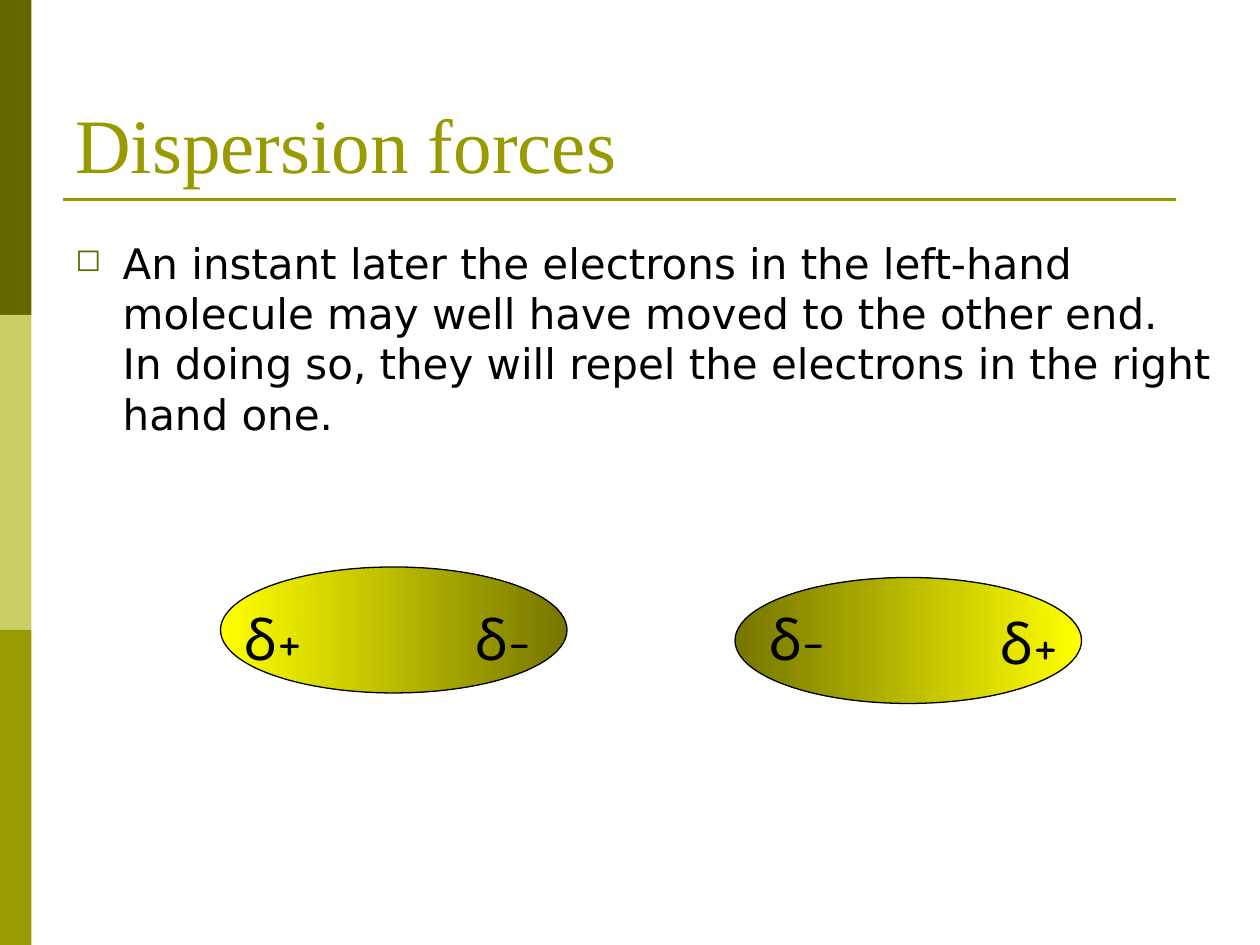
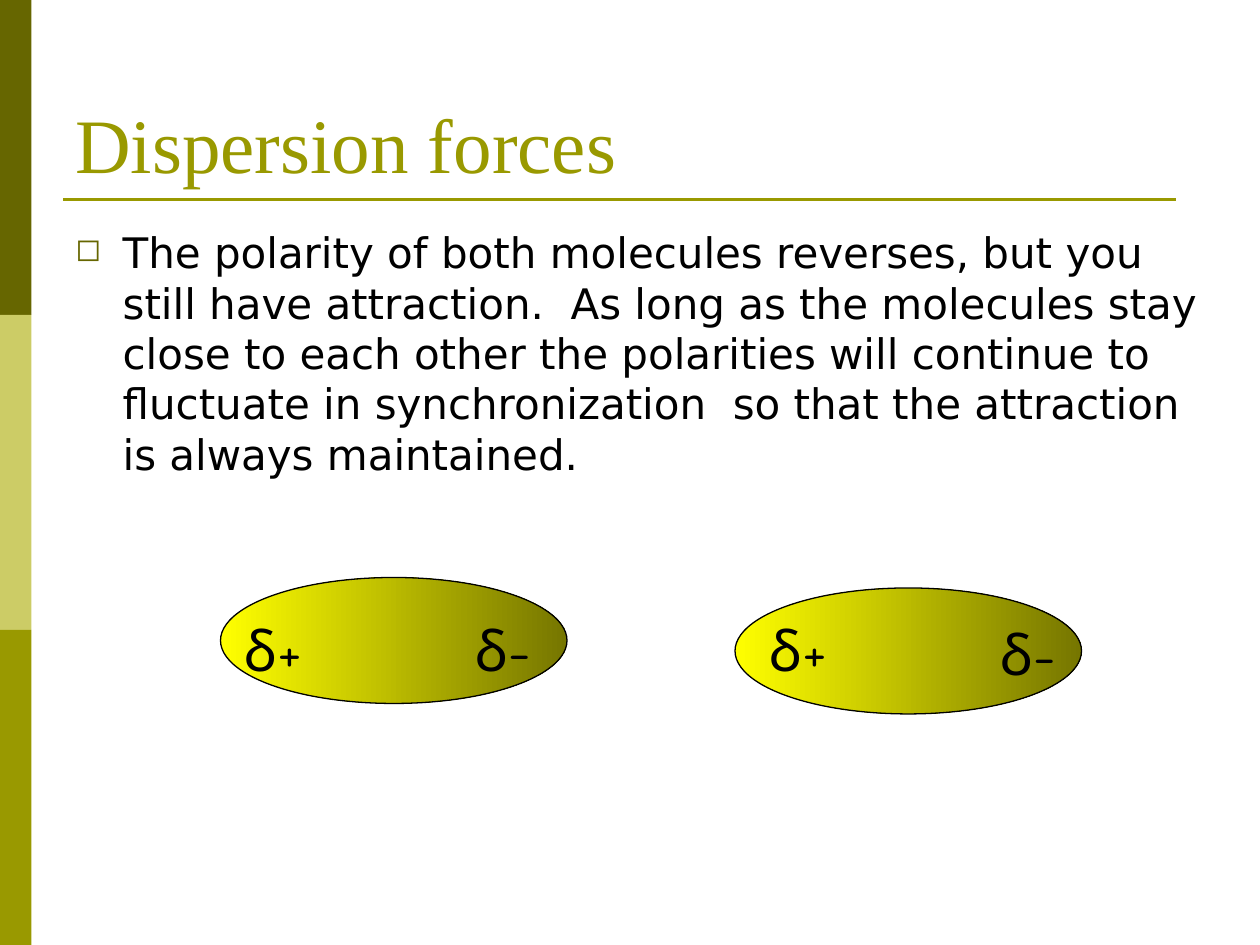
from lxml import etree
from pptx import Presentation
from pptx.dml.color import RGBColor
from pptx.enum import shapes, text
from pptx.oxml import ns
from pptx.util import Emu, Pt

PX = 7620
SLIDE_WIDTH, SLIDE_HEIGHT = 1200, 900

DARK_OLIVE = RGBColor(0x66, 0x66, 0x00)
PALE_OLIVE = RGBColor(0xCC, 0xCC, 0x66)
OLIVE = RGBColor(0x99, 0x99, 0x00)
ELECTRON_RICH = RGBColor(0x76, 0x76, 0x00)
ELECTRON_POOR = RGBColor(0xFF, 0xFF, 0x00)
BLACK = RGBColor(0x00, 0x00, 0x00)

TITLE_FONT = "Times New Roman"
BODY_FONT = "DejaVu Sans"
CHARGE_FONT = "Comic Neue"

TITLE = "Dispersion forces"
SLIDES = [
    {
        "body": "An instant later the electrons in the left-hand molecule may well have "
                "moved to the other end.  In doing so, they will repel the electrons in "
                "the right hand one.",
        "body_box": (60, 220, 1110, 480),
        "molecules_top": 540,
        "charges": ("+-", "-+"),
    },
    {
        "body": "The polarity of both molecules reverses, but you still have attraction.  "
                "As long as the molecules stay close to each other the polarities will "
                "continue to fluctuate in synchronization  so that the attraction is "
                "always maintained.",
        "body_box": (60, 210, 1110, 690),
        "molecules_top": 550,
        "charges": ("+-", "+-"),
    },
]


def px(*lengths):
    """Turn pixel lengths into EMU."""
    return [Emu(length * PX) for length in lengths]


def add_text(slide, box, words, font_name, size, color, anchor=text.MSO_ANCHOR.TOP):
    """Add a wrapping one-paragraph text box and return its paragraph."""
    frame = slide.shapes.add_textbox(*px(*box)).text_frame
    frame.word_wrap = True
    frame.vertical_anchor = anchor
    paragraph = frame.paragraphs[0]
    paragraph.text = words
    paragraph.font.name = font_name
    paragraph.font.size = Pt(size)
    paragraph.font.color.rgb = color
    return paragraph


def add_side_bands(slide, left, top, width, height):
    """Stack three equal colour bands in the given box."""
    colors = (DARK_OLIVE, PALE_OLIVE, OLIVE)
    band_height = height // len(colors)
    for row, color in enumerate(colors):
        band = slide.shapes.add_shape(
            shapes.MSO_SHAPE.RECTANGLE,
            *px(left, top + row * band_height, width, band_height))
        band.shadow.inherit = False
        band.fill.solid()
        band.fill.fore_color.rgb = color
        band.line.fill.background()


def add_title(slide, left, top, width, height):
    """Add the title with the rule just below it."""
    add_text(slide, (left, top, width, height), TITLE, TITLE_FONT, 44, OLIVE,
             text.MSO_ANCHOR.BOTTOM)
    rule_y = top + height + 4
    rule = slide.shapes.add_connector(
        shapes.MSO_CONNECTOR.STRAIGHT, *px(left, rule_y, left + width - 20, rule_y))
    rule.line.color.rgb = OLIVE
    rule.line.width = Pt(1.5)
    etree.SubElement(rule.element.spPr, ns.qn("a:effectLst"))


def add_body(slide, box, words):
    """Add the explanation as a paragraph with a hollow square bullet."""
    paragraph = add_text(slide, box, words, BODY_FONT, 24, BLACK)
    properties = paragraph._p.get_or_add_pPr()
    indent = 45 * PX
    properties.set("marL", str(indent))
    properties.set("indent", str(-indent))
    bullet_color = etree.SubElement(properties, ns.qn("a:buClr"))
    etree.SubElement(bullet_color, ns.qn("a:srgbClr"), val=str(DARK_OLIVE))
    etree.SubElement(properties, ns.qn("a:buSzPct"), val="75000")
    etree.SubElement(properties, ns.qn("a:buChar"), char="◻")
    properties.append(properties.find(ns.qn("a:defRPr")))


def add_molecule(slide, left, top, charges, label_offsets):
    """Add a polarised molecule, dark at its negative end, with a charge at each end."""
    molecule = slide.shapes.add_shape(shapes.MSO_SHAPE.OVAL, *px(left, top, 330, 120))
    molecule.shadow.inherit = False
    molecule.line.color.rgb = BLACK
    molecule.line.width = Pt(0.75)
    molecule.fill.gradient()
    molecule.fill.gradient_angle = 0
    for stop, charge in zip(molecule.fill.gradient_stops, charges):
        stop.color.rgb = ELECTRON_RICH if charge == "-" else ELECTRON_POOR
    for charge, (x, y) in zip(charges, label_offsets):
        add_text(slide, (left + x, top + y, 80, 75), "δ" + charge, CHARGE_FONT, 32, BLACK)


def add_molecule_pair(slide, left, top, charges):
    """Add two neighbouring molecules, the right one slightly lower."""
    left_charges, right_charges = charges
    add_molecule(slide, left, top, left_charges, ((10, 30), (230, 30)))
    add_molecule(slide, left + 490, top + 10, right_charges, ((20, 20), (240, 24)))


def add_dispersion_slide(presentation, content):
    """Add one slide with bands, title, explanation and molecules."""
    slide = presentation.slides.add_slide(presentation.slide_layouts[6])
    add_side_bands(slide, 0, 0, 30, SLIDE_HEIGHT)
    add_title(slide, 60, 36, 1080, 150)
    add_body(slide, content["body_box"], content["body"])
    add_molecule_pair(slide, 210, content["molecules_top"], content["charges"])


def main():
    """Build and save the presentation."""
    presentation = Presentation()
    presentation.slide_width, presentation.slide_height = px(SLIDE_WIDTH, SLIDE_HEIGHT)
    for content in SLIDES:
        add_dispersion_slide(presentation, content)
    presentation.save("out.pptx")


if __name__ == "__main__":
    main()
